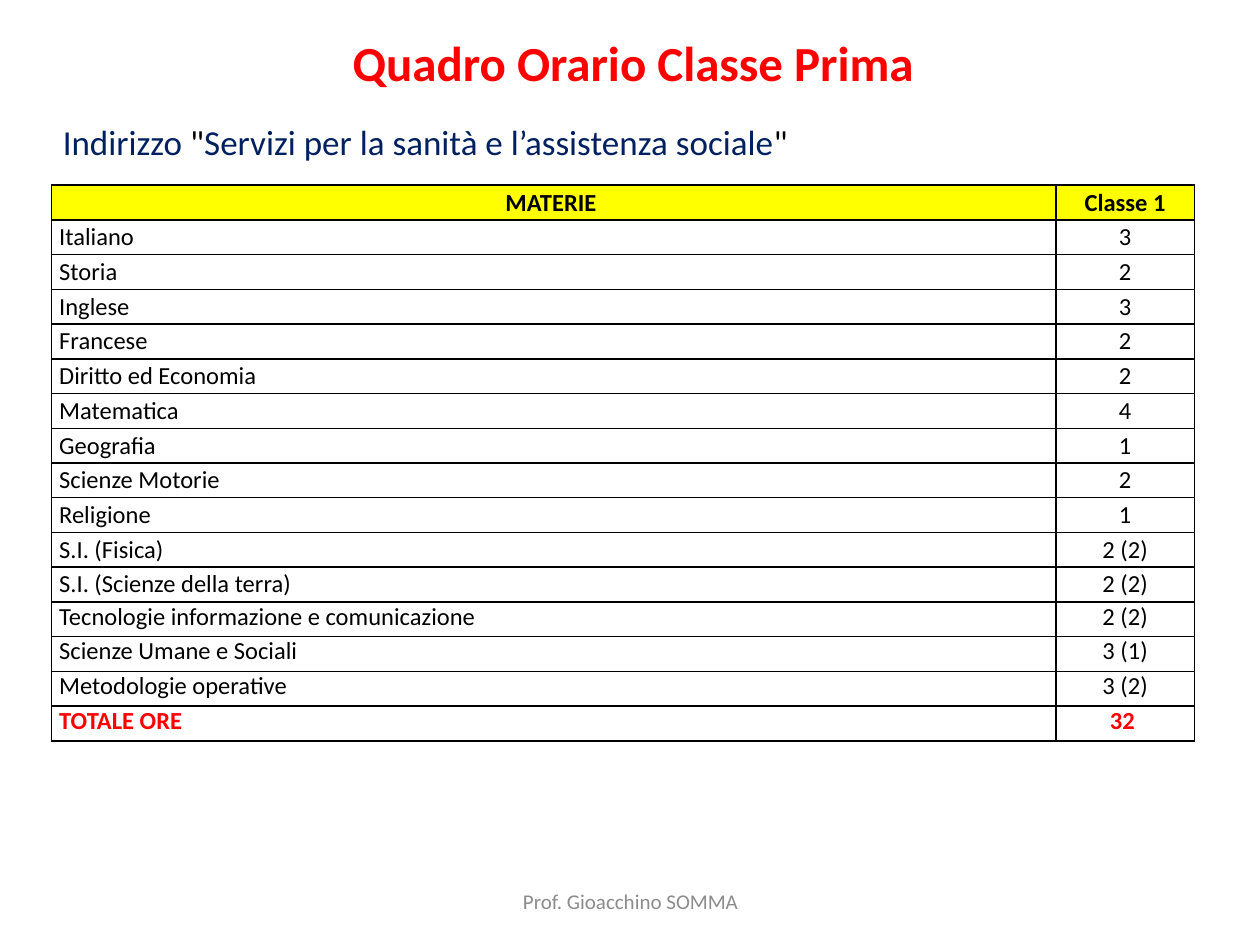
from dataclasses import dataclass
from typing import NamedTuple

from lxml import etree
from pptx import Presentation
from pptx.dml.color import RGBColor
from pptx.enum.text import MSO_ANCHOR, PP_ALIGN
from pptx.oxml.ns import qn
from pptx.util import Inches, Pt

LEFT, CENTER = PP_ALIGN.LEFT, PP_ALIGN.CENTER
TOP, MIDDLE = MSO_ANCHOR.TOP, MSO_ANCHOR.MIDDLE


@dataclass(frozen=True)
class Theme:
    font: str = "Calibri"
    red: str = "FF0000"
    navy: str = "002060"
    black: str = "000000"
    gray: str = "8C8C8C"
    yellow: str = "FFFF00"
    title_size: int = 28
    subtitle_size: int = 20
    table_size: int = 14
    footer_size: int = 12
    border_width: int = 1


class Box(NamedTuple):
    left: float
    top: float
    width: float
    height: float


class Words(NamedTuple):
    text: str
    color: str
    bold: bool = False


class Subject(NamedTuple):
    name: str
    hours: str
    anchor: MSO_ANCHOR = MIDDLE


THEME = Theme()
TABLE_BOX = Box(0.41, 1.47, 9.07, 4.41)
COLUMN_WIDTHS = (7.97, 1.1)
HEADER = Subject("MATERIE ", "Classe 1")
SUBJECTS = [
    Subject("Italiano", "3"),
    Subject("Storia", "2"),
    Subject("Inglese", "3"),
    Subject("Francese", "2"),
    Subject("Diritto ed Economia", "2"),
    Subject("Matematica", "4"),
    Subject("Geografia", "1"),
    Subject("Scienze Motorie", "2"),
    Subject("Religione", "1"),
    Subject("S.I. (Fisica)", "2 (2)"),
    Subject("S.I. (Scienze della terra)", "2 (2)"),
    Subject("Tecnologie informazione e comunicazione", "2 (2)", TOP),
    Subject("Scienze Umane e Sociali", "3 (1)", TOP),
    Subject("Metodologie operative", "3 (2)", TOP),
]
TOTAL = Subject("TOTALE ORE", "32 ", TOP)


def write(frame, words: list[Words], size: int, align: PP_ALIGN) -> None:
    paragraph = frame.paragraphs[0]
    paragraph.alignment = align
    for part in words:
        run = paragraph.add_run()
        run.text = part.text
        run.font.name = THEME.font
        run.font.size = Pt(size)
        run.font.bold = part.bold
        run.font.color.rgb = RGBColor.from_string(part.color)


def place_text(shape, box: Box, words: list[Words], size: int,
               align: PP_ALIGN, anchor: MSO_ANCHOR) -> None:
    shape.left, shape.top, shape.width, shape.height = map(Inches, box)
    shape.text_frame.word_wrap = True
    shape.text_frame.vertical_anchor = anchor
    write(shape.text_frame, words, size, align)


def add_borders(cell) -> None:
    properties = cell._tc.get_or_add_tcPr()
    for position, side in enumerate(("a:lnL", "a:lnR", "a:lnT", "a:lnB")):
        line = etree.Element(qn(side), w=str(Pt(THEME.border_width)))
        fill = etree.SubElement(line, qn("a:solidFill"))
        etree.SubElement(fill, qn("a:srgbClr"), val=THEME.black)
        properties.insert(position, line)


def fill_row(cells, subject: Subject, color: str, bold: bool,
             name_align: PP_ALIGN, background: str | None = None) -> None:
    entries = ((subject.name, name_align), (subject.hours, CENTER))
    for cell, (text, align) in zip(cells, entries):
        cell.margin_left = cell.margin_right = Inches(0.06)
        cell.margin_top = cell.margin_bottom = 0
        cell.vertical_anchor = subject.anchor
        if background:
            cell.fill.solid()
            cell.fill.fore_color.rgb = RGBColor.from_string(background)
        else:
            cell.fill.background()
        write(cell.text_frame, [Words(text, color, bold)], THEME.table_size, align)
        add_borders(cell)


def add_timetable(slide) -> None:
    row_count = len(SUBJECTS) + 2
    timetable = slide.shapes.add_table(
        row_count, len(COLUMN_WIDTHS), *map(Inches, TABLE_BOX)).table
    timetable.horz_banding = False
    for column, width in zip(timetable.columns, COLUMN_WIDTHS):
        column.width = Inches(width)
    for row in timetable.rows:
        row.height = Inches(TABLE_BOX.height / row_count)
    header_row, *subject_rows, total_row = timetable.rows
    fill_row(header_row.cells, HEADER, THEME.black, True, CENTER, THEME.yellow)
    for row, subject in zip(subject_rows, SUBJECTS):
        fill_row(row.cells, subject, THEME.black, False, LEFT)
    fill_row(total_row.cells, TOTAL, THEME.red, True, LEFT)


def main() -> None:
    presentation = Presentation()
    presentation.slide_width, presentation.slide_height = Inches(10), Inches(7.5)
    slide = presentation.slides.add_slide(presentation.slide_layouts[5])
    place_text(slide.shapes.title, Box(0.84, 0.21, 8.37, 0.57),
               [Words("Quadro Orario Classe Prima", THEME.red, True)],
               THEME.title_size, CENTER, TOP)
    place_text(slide.shapes.add_textbox(0, 0, 0, 0), Box(0.4, 0.91, 8.93, 0.44),
               [Words("Indirizzo ", THEME.navy),
                Words('"', THEME.black),
                Words("Servizi per la sanità e l’assistenza sociale", THEME.navy),
                Words('"', THEME.black)],
               THEME.subtitle_size, LEFT, TOP)
    add_timetable(slide)
    place_text(slide.shapes.add_textbox(0, 0, 0, 0), Box(3.42, 6.95, 3.17, 0.4),
               [Words("Prof. Gioacchino SOMMA", THEME.gray)],
               THEME.footer_size, CENTER, MIDDLE)
    presentation.save("out.pptx")


if __name__ == "__main__":
    main()
